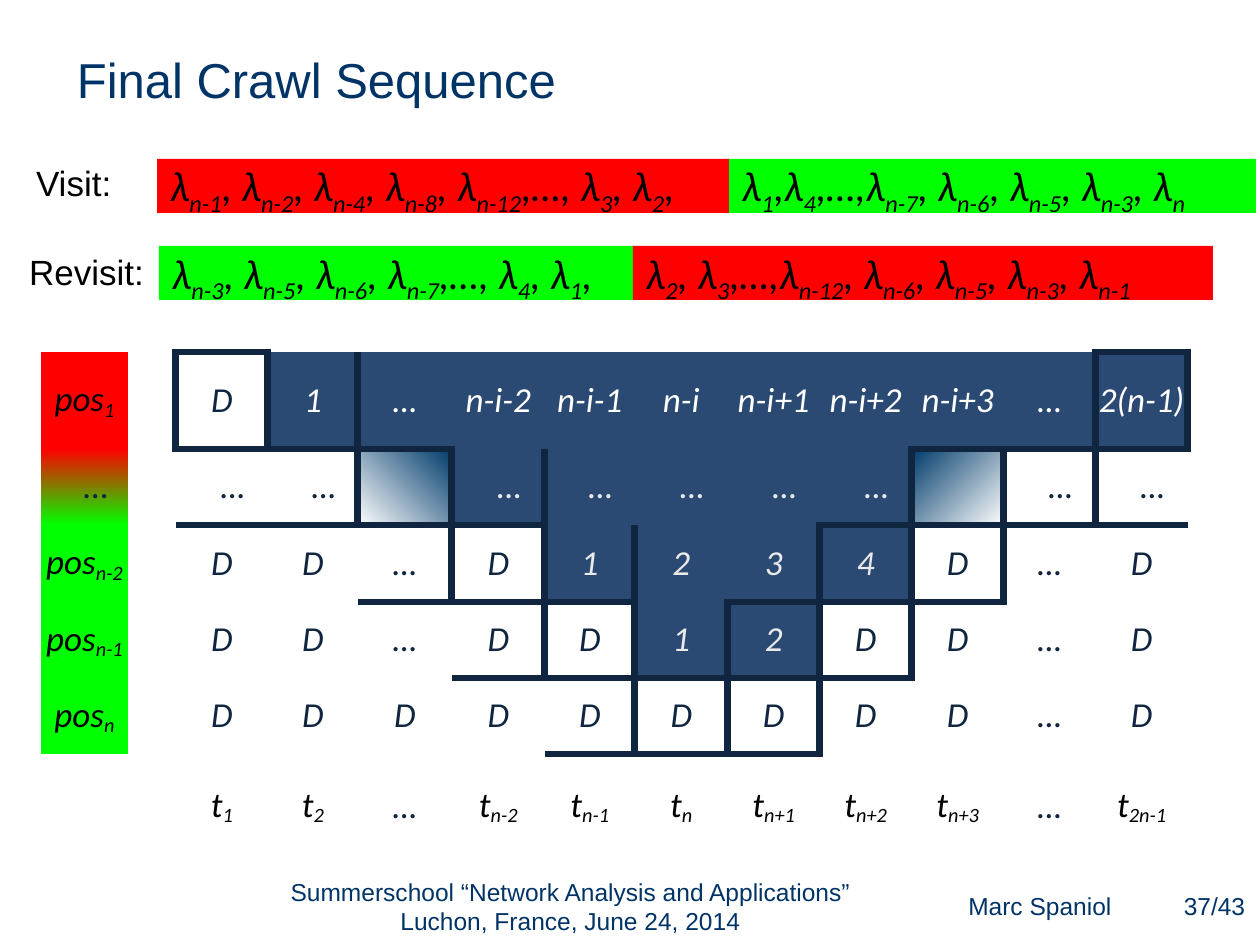
from dataclasses import dataclass

from lxml.etree import SubElement
from pptx import Presentation
from pptx.dml.color import RGBColor as Rgb
from pptx.enum.shapes import MSO_SHAPE as Preset
from pptx.enum.text import MSO_ANCHOR as Anchor, PP_ALIGN as Align
from pptx.oxml.ns import qn
from pptx.util import Pt

EMU_PER_PX = 914400 / 126
COLORS = {
    "navy": "003366", "black": "000000", "white": "FFFFFF", "pale": "EAEAEA",
    "red": "FF0000", "green": "00FF00", "blue": "2B4A73", "ink": "10253F",
    "deep": "003B6B",
}
NO_GRID_STYLE = "{2D5ABB26-0587-4C30-8999-92F81FD0307C}"


@dataclass(frozen=True)
class Label:
    box: tuple[int, int, int, int]
    text: str
    size: int
    color: str
    align: Align = Align.LEFT
    anchor: Anchor = Anchor.MIDDLE
    insets: tuple[int, int, int, int] = (13, 6, 13, 6)


@dataclass(frozen=True)
class Bar:
    box: tuple[int, int, int, int]
    text: str
    fill: str


@dataclass(frozen=True)
class Step:
    """One table row; the cells after `left` up to `right` are blue."""
    height: int
    cells: str
    left: int = 0
    right: int = 0


def px(length: int) -> int:
    return round(length * EMU_PER_PX)


def rgb(name: str) -> Rgb:
    return Rgb.from_string(COLORS[name])


def assign(target, values: dict) -> None:
    for key, value in values.items():
        setattr(target, key, value)


def margins(insets: tuple[int, int, int, int]) -> dict:
    sides = ("left", "top", "right", "bottom")
    return {f"margin_{side}": px(inset) for side, inset in zip(sides, insets)}


def write(paragraph, text: str, drop: int, color: str, **font) -> None:
    """Add runs; every second part between | marks is a subscript."""
    for index, part in enumerate(text.split("|")):
        if not part:
            continue
        run = paragraph.add_run()
        run.text = part
        assign(run.font, font)
        run.font.color.rgb = rgb(color)
        if index % 2:
            run._r.get_or_add_rPr().set("baseline", str(-1000 * drop))


def draw_label(slide, label: Label) -> None:
    frame = slide.shapes.add_textbox(*map(px, label.box)).text_frame
    assign(frame, {"word_wrap": True, "vertical_anchor": label.anchor,
                   **margins(label.insets)})
    frame.paragraphs[0].alignment = label.align
    write(frame.paragraphs[0], label.text, 0, label.color,
          name="Arial", size=Pt(label.size))


def draw_bar(slide, bar: Bar) -> None:
    strip = slide.shapes.add_shape(Preset.RECTANGLE, *map(px, bar.box))
    strip.shadow.inherit = False
    strip.fill.solid()
    strip.fill.fore_color.rgb = rgb(bar.fill)
    strip.line.fill.background()
    assign(strip.text_frame, {"word_wrap": True, "vertical_anchor": Anchor.TOP,
                              **margins((13, 1, 13, 1))})
    paragraph = strip.text_frame.paragraphs[0]
    paragraph.alignment = Align.LEFT
    write(paragraph, bar.text, 25, "black",
          name="Calibri", size=Pt(24), italic=True)


def paint(cell, fill) -> None:
    """Fill with one colour name, or with (start, end, angle)."""
    if fill is None:
        cell.fill.background()
    elif isinstance(fill, str):
        cell.fill.solid()
        cell.fill.fore_color.rgb = rgb(fill)
    else:
        cell.fill.gradient()
        cell.fill.gradient_angle = fill[2]
        for stop, color in zip(cell.fill.gradient_stops, fill):
            stop.color.rgb = rgb(color)


def outline(cell, sides: set[str]) -> None:
    """Draw borders; they stand before the fill in the order L, R, T, B."""
    properties = cell._tc.get_or_add_tcPr()
    for place, side in enumerate(s for s in "LRTB" if s in sides):
        line = SubElement(properties, qn(f"a:ln{side}"), w=str(Pt(4.5)))
        color = SubElement(SubElement(line, qn("a:solidFill")), qn("a:srgbClr"))
        color.set("val", COLORS["ink"])
        properties.insert(place, line)


def cell_borders(steps: list[Step]) -> dict[tuple[int, int], set[str]]:
    """Frame both ends of each step and share each edge with its neighbour."""
    neighbours = {"L": (0, -1, "R"), "R": (0, 1, "L"),
                  "T": (-1, 0, "B"), "B": (1, 0, "T")}
    edges = [(row, col, side) for row, step in enumerate(steps) if step.left
             for col in (step.left, step.right) for side in neighbours]
    edges += [(0, 3, "B"), (0, 11, "B")]
    borders = {}
    for row, col, side in edges:
        down, across, opposite = neighbours[side]
        borders.setdefault((row, col), set()).add(side)
        borders.setdefault((row + down, col + across), set()).add(opposite)
    return borders


def draw_table(slide, left: int, top: int, widths: list[int], steps: list[Step],
               special: dict) -> None:
    heights = [step.height for step in steps]
    box = (left, top, sum(widths), sum(heights))
    table = slide.shapes.add_table(len(steps), len(widths), *map(px, box)).table
    assign(table, {"first_row": False, "horz_banding": False})
    table._tbl.tblPr.find(qn("a:tableStyleId")).text = NO_GRID_STYLE
    for column, width in zip(table.columns, widths):
        column.width = px(width)
    borders = cell_borders(steps)
    for row, step in enumerate(steps):
        table.rows[row].height = px(step.height)
        upright = row == 1
        for col, text in enumerate(step.cells.split(";")):
            cell = table.cell(row, col)
            blue = step.left < col <= step.right
            paint(cell, special.get((row, col), "blue" if blue else None))
            outline(cell, borders.get((row, col), set()))
            assign(cell, {
                "vertical_anchor": Anchor.BOTTOM if row == 5 else Anchor.MIDDLE,
                **margins((25 if upright else 3, 3, 3, 3))})
            if upright and text:
                cell._tc.get_or_add_tcPr().set("vert", "eaVert")
            if blue:
                color = "pale" if row else "white"
            else:
                color = "black" if "|" in text else "ink"
            paragraph = cell.text_frame.paragraphs[0]
            paragraph.alignment = Align.CENTER
            write(paragraph, text, 15, color, name="Calibri", size=Pt(20),
                  italic=(row, col) != (1, 0))


LABELS = [
    Label((64, 66, 883, 79), "Final Crawl Sequence", 28, "navy",
          insets=(13, 0, 13, 53)),
    Label((23, 155, 135, 55), "Visit:", 20, "black", anchor=Anchor.TOP),
    Label((16, 244, 160, 55), "Revisit:", 20, "black", anchor=Anchor.TOP),
    Label((935, 873, 210, 66), "Marc Spaniol", 14, "navy", Align.CENTER),
    Label((263, 873, 615, 66), "Summerschool “Network Analysis and Applications” "
          "Luchon, France, June 24, 2014", 14, "navy", Align.CENTER),
    Label((1177, 876, 77, 60), "37/43", 14, "navy", Align.CENTER,
          insets=(4, 6, 6, 6)),
]
BARS = [
    Bar((159, 246, 475, 54),
        "λ|n-3|, λ|n-5|, λ|n-6|, λ|n-7|,…, λ|4|, λ|1|,", "green"),
    Bar((633, 246, 580, 54),
        "λ|2|, λ|3|,…,λ|n-12|, λ|n-6|, λ|n-5|, λ|n-3|, λ|n-1|", "red"),
    Bar((729, 159, 527, 54),
        "λ|1|,λ|4|,…,λ|n-7|, λ|n-6|, λ|n-5|, λ|n-3|, λ|n|", "green"),
    Bar((157, 159, 572, 54),
        "λ|n-1|, λ|n-2|, λ|n-4|, λ|n-8|, λ|n-12|,…, λ|3|, λ|2|,", "red"),
]
COLUMN_WIDTHS = [87, 48, 92, 90, 94, 93, 90, 93] + [92] * 5
STEPS = [
    Step(97, "pos|1|;;D;1;…;n-i-2;n-i-1;n-i;n-i+1;n-i+2;n-i+3;…;2(n-1)", 2, 12),
    Step(76, "…;;…;…;;…;…;…;…;…;;…;…", 4, 10),
    Step(77, "pos|n-2|;;D;D;…;D;1;2;3;4;D;…;D", 5, 9),
    Step(76, "pos|n-1|;;D;D;…;D;D;1;2;D;D;…;D", 6, 8),
    Step(76, "pos|n|;;D;D;D;D;D;D;D;D;D;…;D", 7, 7),
    Step(77, ";;t|1|;t|2|;…;t|n-2|;t|n-1|;t|n|;t|n+1|;t|n+2|;t|n+3|;…;t|2n-1|"),
]
SPECIAL_FILLS = {
    (0, 0): "red", (1, 0): ("red", "green", 270),
    (2, 0): "green", (3, 0): "green", (4, 0): "green",
    (1, 4): ("white", "deep", 45), (1, 10): ("deep", "white", 315),
}


def main() -> None:
    deck = Presentation()
    assign(deck, {"slide_width": px(1260), "slide_height": px(945)})
    slide = deck.slides.add_slide(deck.slide_layouts[6])
    # Title, row captions and footer
    for label in LABELS:
        draw_label(slide, label)
    # Visit and revisit sequences
    for bar in BARS:
        draw_bar(slide, bar)
    # Position by time table
    draw_table(slide, 41, 352, COLUMN_WIDTHS, STEPS, SPECIAL_FILLS)
    deck.save("out.pptx")


if __name__ == "__main__":
    main()
